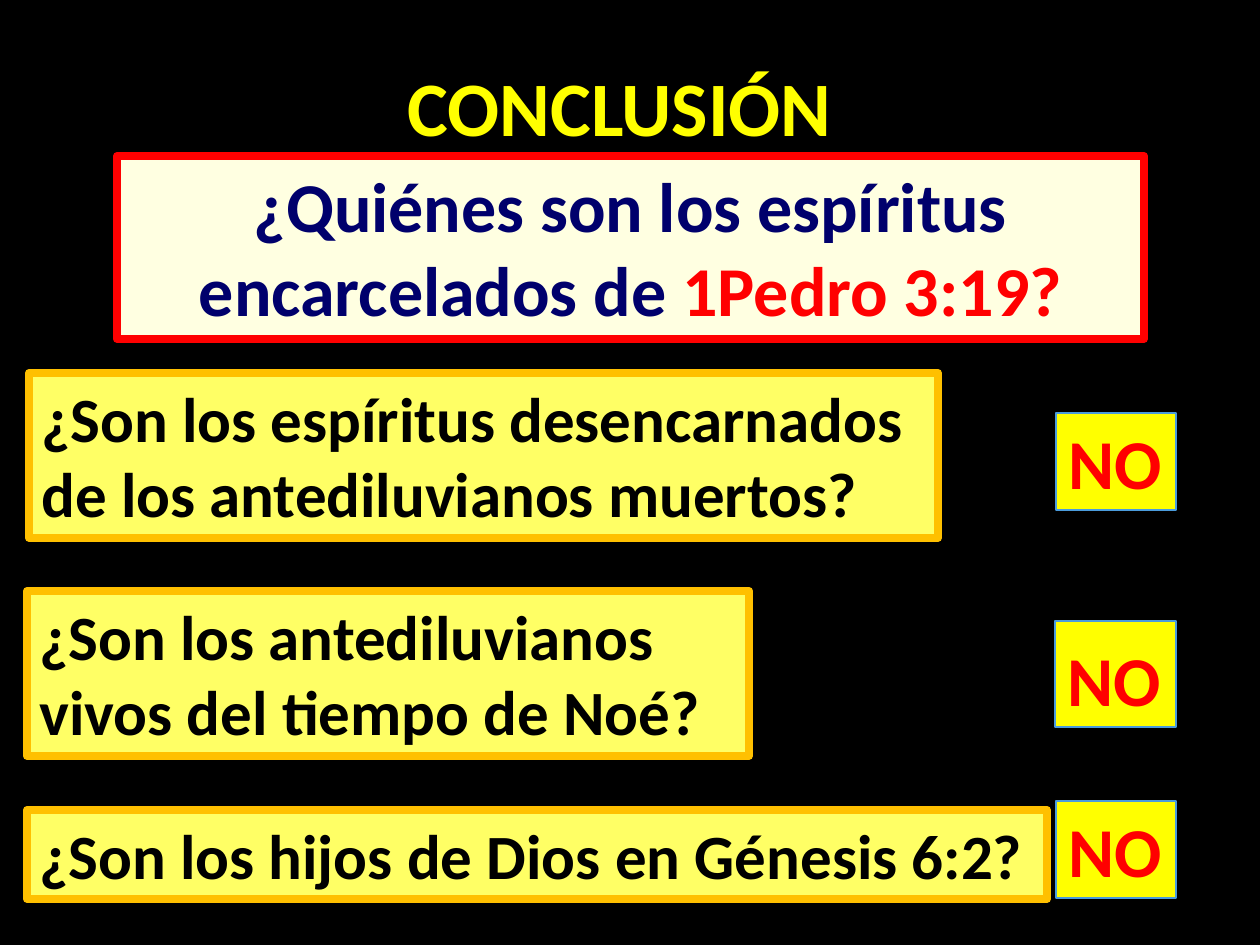
import pptx
import pptx.dml.color
import pptx.enum.shapes
import pptx.enum.text
import pptx.util

PX = 914400 / 126  # EMU per pixel
ANCHOR = pptx.enum.text.MSO_ANCHOR
ALIGN = pptx.enum.text.PP_ALIGN


def rgb(value):
    return pptx.dml.color.RGBColor.from_string(value)


def add_box(box, runs, size, fill=None, line=None, line_width=4.5,
            align=ALIGN.LEFT, anchor=ANCHOR.TOP, wrap=True):
    """Add a box of bold text; runs is a list of (text, colour) pairs."""
    left, top, width, height = [pptx.util.Emu(round(v * PX)) for v in box]
    if fill:
        shape = slide.shapes.add_shape(
            pptx.enum.shapes.MSO_SHAPE.RECTANGLE, left, top, width, height)
        shape.shadow.inherit = False
        shape.fill.solid()
        shape.fill.fore_color.rgb = rgb(fill)
        shape.line.color.rgb = rgb(line)
        shape.line.width = pptx.util.Pt(line_width)
    else:
        shape = slide.shapes.add_textbox(left, top, width, height)
    frame = shape.text_frame
    frame.word_wrap = wrap
    frame.vertical_anchor = anchor
    paragraph = frame.paragraphs[0]
    paragraph.alignment = align
    paragraph.font.name = "Calibri"
    paragraph.font.size = pptx.util.Pt(size)
    paragraph.font.bold = True
    for text, color in runs:
        run = paragraph.add_run()
        run.text = text
        run.font.color.rgb = rgb(color)


presentation = pptx.Presentation()
presentation.slide_width = pptx.util.Inches(10)
presentation.slide_height = pptx.util.Inches(7.5)
slide = presentation.slides.add_slide(presentation.slide_layouts[6])
slide.background.fill.solid()
slide.background.fill.fore_color.rgb = rgb("000000")

add_box((395, 53, 470, 106), [("CONCLUSIÓN", "FFFF00")], 44)
add_box((117, 156, 1027, 183),
        [("¿Quiénes son los espíritus encarcelados de ", "00006C"),
         ("1Pedro 3:19?", "FF0000")],
        40, "FFFFE1", "FF0000", align=ALIGN.CENTER)

# question, its box, box of its answer
questions = [
    ("¿Son los espíritus desencarnados de los antediluvianos muertos?",
     (29, 373, 909, 165), (1056, 413, 120, 97)),
    ("¿Son los antediluvianos vivos del tiempo de Noé?",
     (27, 591, 722, 165), (1055, 621, 121, 106)),
    ("¿Son los hijos de Dios en Génesis 6:2?",
     (27, 810, 1020, 89), (1056, 801, 120, 97)),
]
for question, question_box, answer_box in questions:
    add_box(question_box, [(question, "000000")], 36, "FFFF65", "FFC000")
    add_box(answer_box, [("NO", "FF0000")], 40, "FFFF00", "4A9BDC", 0.75,
            anchor=ANCHOR.BOTTOM, wrap=False)

presentation.save("out.pptx")
